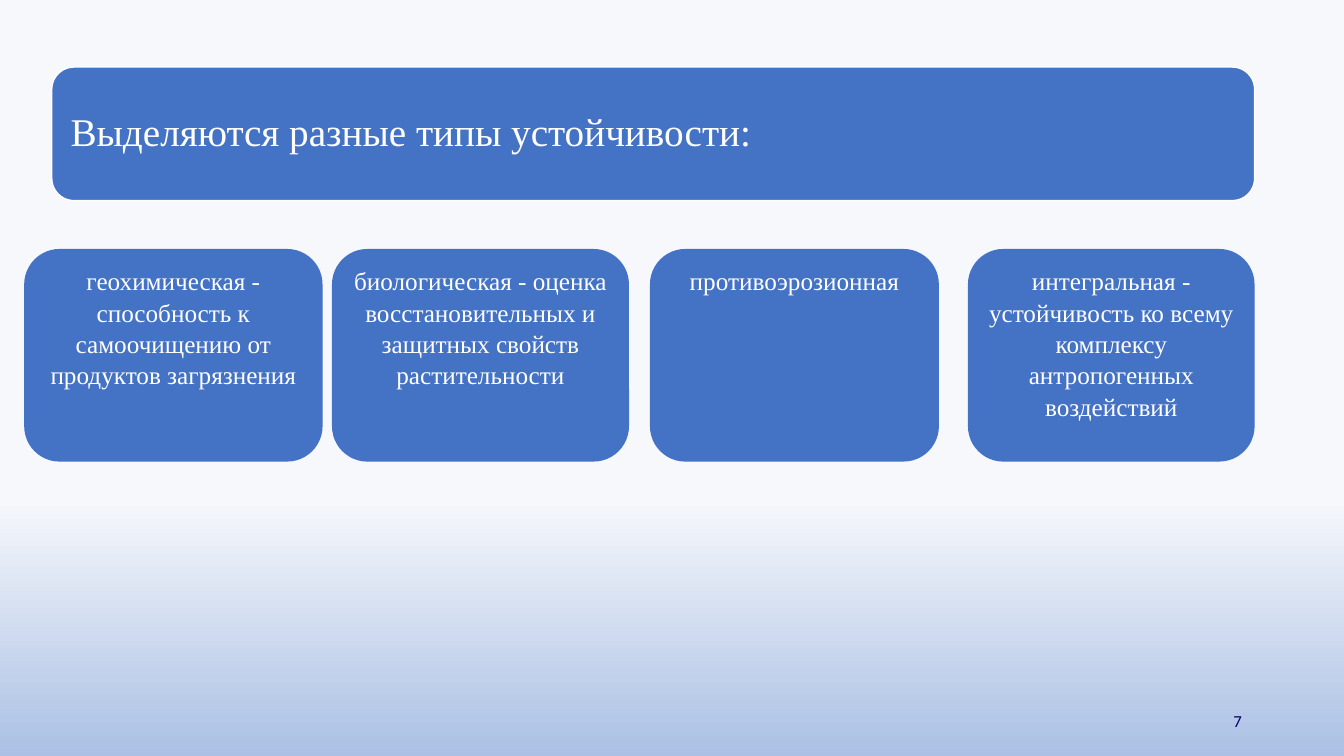
from dataclasses import dataclass

from pptx import Presentation
from pptx.dml.color import RGBColor
from pptx.enum.shapes import MSO_SHAPE
from pptx.enum.text import MSO_ANCHOR, MSO_AUTO_SIZE, PP_ALIGN
from pptx.shapes.autoshape import Shape
from pptx.slide import Slide
from pptx.util import Inches, Pt

ROUNDED = MSO_SHAPE.ROUNDED_RECTANGLE
TOP, MIDDLE = MSO_ANCHOR.TOP, MSO_ANCHOR.MIDDLE
LEFT, CENTER, RIGHT = PP_ALIGN.LEFT, PP_ALIGN.CENTER, PP_ALIGN.RIGHT
NO_AUTOFIT = MSO_AUTO_SIZE.NONE

BLUE = RGBColor(0x44, 0x72, 0xC4)
WHITE = RGBColor(0xFF, 0xFF, 0xFF)
NAVY = RGBColor(0x00, 0x00, 0x66)
PALE = RGBColor(0xF6, 0xF8, 0xFC)
SKY = RGBColor(0xAB, 0xC0, 0xE4)

SLIDE_WIDTH, SLIDE_HEIGHT = Inches(13.33), Inches(7.5)
TITLE_ONLY_LAYOUT = 5
SERIF, SANS = "Times New Roman", "Calibri"


@dataclass(frozen=True)
class Area:
    """Position and size in percent of the slide."""

    left: float
    top: float
    width: float
    height: float

    def lengths(self) -> tuple[int, int, int, int]:
        return (
            int(SLIDE_WIDTH * self.left / 100),
            int(SLIDE_HEIGHT * self.top / 100),
            int(SLIDE_WIDTH * self.width / 100),
            int(SLIDE_HEIGHT * self.height / 100),
        )


@dataclass(frozen=True)
class TextStyle:
    size: int
    font: str
    color: RGBColor
    alignment: PP_ALIGN
    anchor: MSO_ANCHOR
    line_spacing: float = 1.0


@dataclass(frozen=True)
class StabilityType:
    left: float
    width: float
    text: str


TITLE_STYLE = TextStyle(28, SERIF, WHITE, LEFT, MIDDLE, 0.9)
CARD_STYLE = TextStyle(18, SERIF, WHITE, CENTER, TOP, 1.04)
NUMBER_STYLE = TextStyle(12, SANS, NAVY, RIGHT, MIDDLE)

BANNER_AREA = Area(3.85, 8.87, 89.5, 17.67)
TITLE_AREA = Area(4.35, 9.73, 88.5, 16)
NUMBER_AREA = Area(70.65, 92.67, 22.5, 5.33)
CARD_TOP, CARD_HEIGHT = 32.93, 28.13

STABILITY_TYPES = [
    StabilityType(1.8, 22.2, "геохимическая - способность к самоочищению от продуктов загрязнения"),
    StabilityType(24.7, 22.1, "биологическая - оценка восстановительных и защитных свойств растительности"),
    StabilityType(48.36, 21.5, "противоэрозионная"),
    StabilityType(72.02, 21.33, "интегральная - устойчивость ко всему комплексу антропогенных воздействий"),
]


def paint_background(slide: Slide) -> None:
    fill = slide.background.fill
    fill.gradient()
    fill.gradient_angle = 270
    for stop, position, color in zip(fill.gradient_stops, (0.66, 1.0), (PALE, SKY)):
        stop.position = position
        stop.color.rgb = color


def write_text(shape: Shape, text: str, style: TextStyle) -> None:
    frame = shape.text_frame
    frame.word_wrap = True
    frame.auto_size = NO_AUTOFIT
    frame.vertical_anchor = style.anchor
    paragraph = frame.paragraphs[0]
    paragraph.alignment = style.alignment
    paragraph.line_spacing = style.line_spacing
    run = paragraph.add_run()
    run.text = text
    run.font.size = Pt(style.size)
    run.font.name = style.font
    run.font.color.rgb = style.color


def add_rounded_box(slide: Slide, area: Area) -> Shape:
    box = slide.shapes.add_shape(ROUNDED, *area.lengths())
    box.shadow.inherit = False
    box.fill.solid()
    box.fill.fore_color.rgb = BLUE
    box.line.fill.background()
    return box


def add_title(slide: Slide, text: str) -> None:
    banner = add_rounded_box(slide, BANNER_AREA)
    banner.line.color.rgb = WHITE
    banner.line.width = Pt(1)
    title = slide.shapes.title
    title.left, title.top, title.width, title.height = TITLE_AREA.lengths()
    frame = title.text_frame
    frame.margin_left = frame.margin_right = Inches(0.12)
    frame.margin_top = frame.margin_bottom = Inches(0.12)
    write_text(title, text, TITLE_STYLE)
    banner.element.addnext(title.element)


def main() -> None:
    presentation = Presentation()
    presentation.slide_width = SLIDE_WIDTH
    presentation.slide_height = SLIDE_HEIGHT
    slide = presentation.slides.add_slide(presentation.slide_layouts[TITLE_ONLY_LAYOUT])

    paint_background(slide)
    add_title(slide, "Выделяются разные типы устойчивости:")
    number = slide.shapes.add_textbox(*NUMBER_AREA.lengths())
    write_text(number, "7", NUMBER_STYLE)
    for stability in STABILITY_TYPES:
        card = add_rounded_box(slide, Area(stability.left, CARD_TOP, stability.width, CARD_HEIGHT))
        write_text(card, stability.text, CARD_STYLE)

    presentation.save("out.pptx")


if __name__ == "__main__":
    main()
